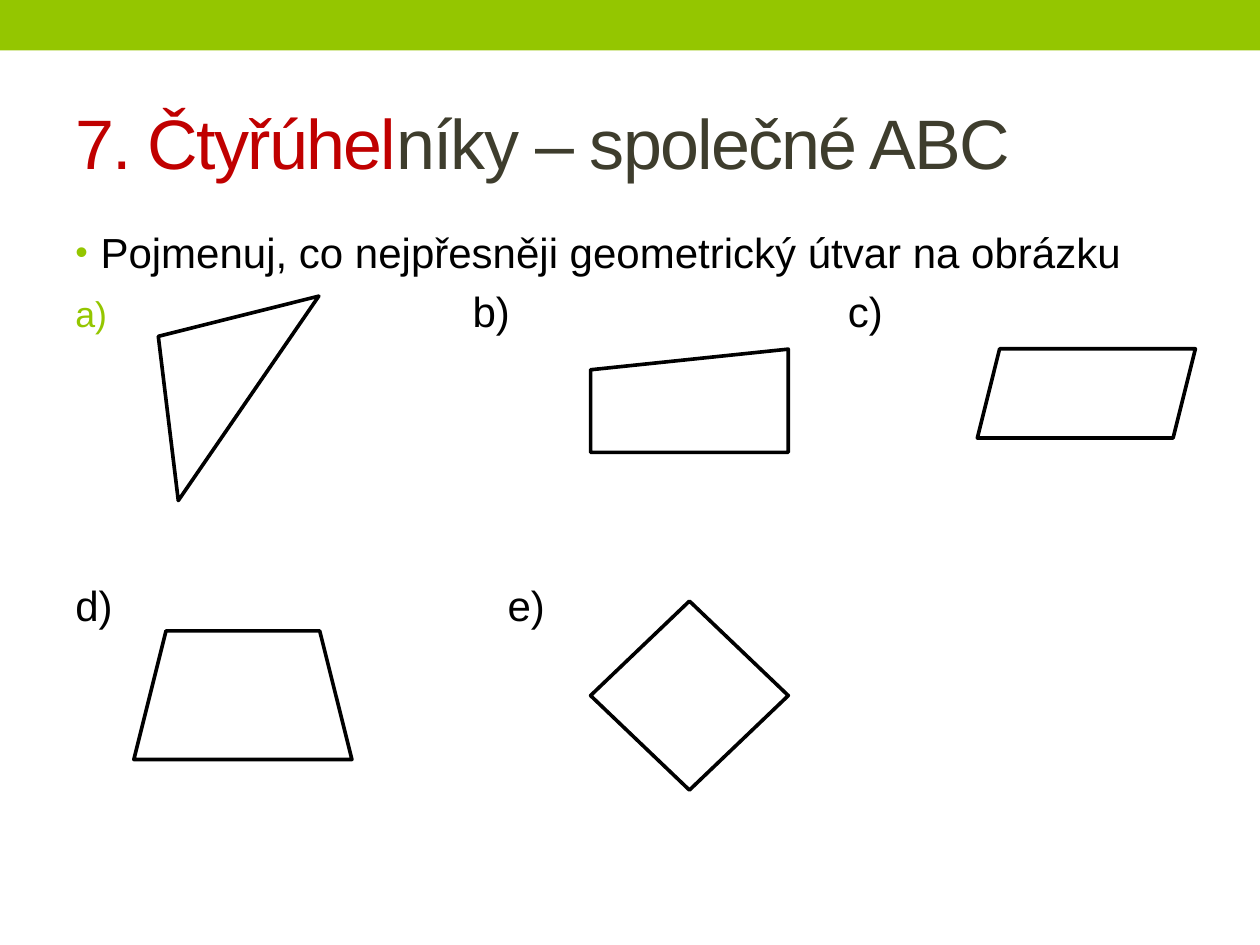
from lxml import etree
from pptx import Presentation
from pptx.dml.color import RGBColor
from pptx.enum import shapes, text
from pptx.oxml import ns
from pptx.util import Pt

GREEN = RGBColor(0x94, 0xC6, 0x00)
RED = RGBColor(0xC0, 0x00, 0x00)
OLIVE = RGBColor(0x3E, 0x3D, 0x2D)
BLACK = RGBColor(0, 0, 0)
WHITE = RGBColor(255, 255, 255)


def add_xml(parent, tag, **attributes):
    return etree.SubElement(parent, ns.qn(tag), attributes)


class Sheet:
    """Holds the style and the slide being filled."""

    font = "Arial"
    body_size = 24
    outline = 2.08

    def __init__(self, slide):
        self.slide = slide

    def shape(self, kind, box, fill, line=None, rotation=0):
        figure = self.slide.shapes.add_shape(kind, *map(Pt, box))
        figure.shadow.inherit = False
        figure.rotation = rotation
        figure.fill.solid()
        figure.fill.fore_color.rgb = fill
        if line is None:
            figure.line.fill.background()
        else:
            figure.line.color.rgb = line
            figure.line.width = Pt(self.outline)
            add_xml(figure.line._get_or_add_ln(), "a:round")

    def text_frame(self, box, anchor=text.MSO_ANCHOR.TOP):
        frame = self.slide.shapes.add_textbox(*map(Pt, box)).text_frame
        frame.word_wrap = True
        frame.vertical_anchor = anchor
        return frame

    def run(self, paragraph, words, color=BLACK, size=body_size, spacing=0):
        run = paragraph.add_run()
        run.text = words
        run.font.name = self.font
        run.font.size = Pt(size)
        run.font.color.rgb = color
        if spacing:
            run.font._element.set("spc", str(spacing * 100))

    def paragraph(self, paragraph, words, before=5.5, indent=0, bullet=None, tabs=()):
        """bullet is a tag with its attributes; tabs are stops in points."""
        paragraph.space_before = Pt(before)
        properties = paragraph._p.get_or_add_pPr()
        properties.set("marL", str(Pt(indent)))
        properties.set("indent", str(Pt(-indent)))
        if bullet:
            tag, attributes = bullet
            add_xml(add_xml(properties, "a:buClr"), "a:srgbClr", val=str(GREEN))
            add_xml(properties, "a:buSzPct", val="85000")
            add_xml(properties, "a:buFont", typeface=self.font)
            add_xml(properties, tag, **attributes)
        if tabs:
            stops = add_xml(properties, "a:tabLst")
            for stop in tabs:
                add_xml(stops, "a:tab", pos=str(Pt(stop)), algn="l")
        self.run(paragraph, words)


def main():
    deck = Presentation()
    deck.slide_width, deck.slide_height = Pt(720), Pt(540)
    sheet = Sheet(deck.slides.add_slide(deck.slide_layouts[6]))
    kinds = shapes.MSO_SHAPE

    # Top band
    sheet.shape(kinds.RECTANGLE, (0, 0, 720, 28.8), GREEN)

    # Title
    title = sheet.text_frame((36, 42, 648, 78), text.MSO_ANCHOR.MIDDLE).paragraphs[0]
    sheet.run(title, "7. Čtyřúhel", RED, 40, -1)
    sheet.run(title, "níky – společné ABC", OLIVE, 40, -1)

    # Task and the letters of the figures
    body = sheet.text_frame((36, 126, 648, 384))
    sheet.paragraph(body.paragraphs[0], "Pojmenuj, co nejpřesněji geometrický útvar na obrázku",
                    indent=14.4, bullet=("a:buChar", {"char": "•"}))
    sheet.paragraph(body.add_paragraph(), "\tb)\tc)", 5, 40.5,
                    ("a:buAutoNum", {"type": "alphaLcParenR"}), (227, 441.5))
    sheet.paragraph(body.add_paragraph(), "d)", 139)

    # Letter of the diamond, level with d)
    diamond_letter = sheet.text_frame((283, 327.7, 50, 36))
    sheet.paragraph(diamond_letter.paragraphs[0], "e)")

    # Triangle and quadrilaterals
    figures = [
        (kinds.ISOSCELES_TRIANGLE, (45.4, 178.6, 141.8, 62.6), 304.5),
        (kinds.DIAMOND, (337.5, 343.5, 113, 108), 0),
        (kinds.PARALLELOGRAM, (558.5, 199.3, 124.6, 51), 0),
        (kinds.TRAPEZOID, (76.5, 360.5, 124.6, 73.5), 0),
        (kinds.FLOWCHART_MANUAL_INPUT, (337.5, 199.5, 113, 59), 0),
    ]
    for kind, box, rotation in figures:
        sheet.shape(kind, box, WHITE, BLACK, rotation)

    deck.save("out.pptx")


if __name__ == "__main__":
    main()
